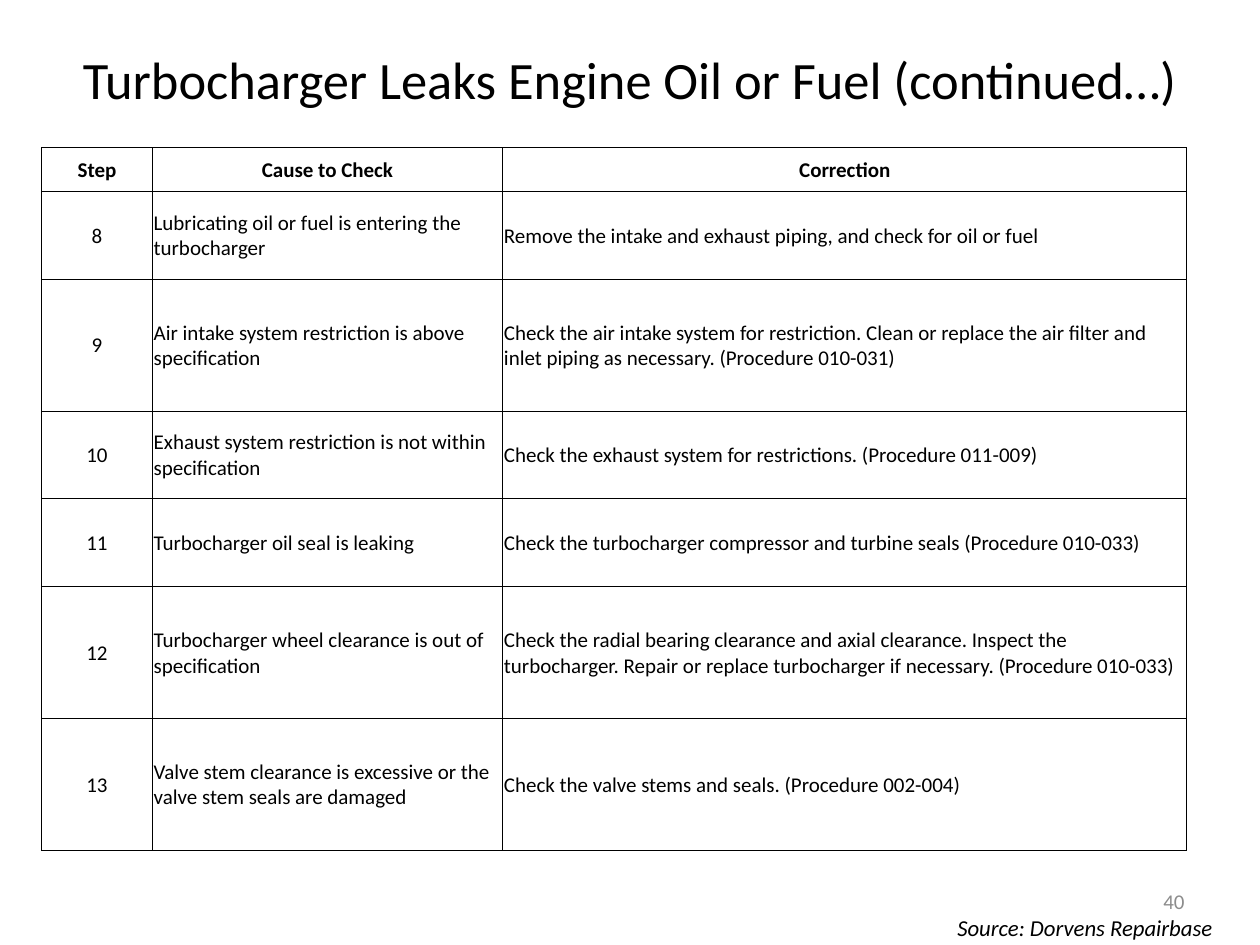
"""Build the turbocharger leak troubleshooting slide."""
from lxml import etree
from pptx import Presentation
from pptx.dml.color import RGBColor
from pptx.enum import text
from pptx.oxml import ns
from pptx.util import Inches, Pt

TITLE = "Turbocharger Leaks Engine Oil or Fuel (continued…)"
SOURCE = "Source: Dorvens Repairbase"
PAGE_NUMBER = "40"
HEADER = ("Step", "Cause to Check", "Correction")
STEPS = [
    ("Lubricating oil or fuel is entering the turbocharger",
     "Remove the intake and exhaust piping, and check for oil or fuel"),
    ("Air intake system restriction is above specification",
     "Check the air intake system for restriction. Clean or replace the air filter "
     "and inlet piping as necessary. (Procedure 010-031)"),
    ("Exhaust system restriction is not within specification",
     "Check the exhaust system for restrictions. (Procedure 011-009)"),
    ("Turbocharger oil seal is leaking",
     "Check the turbocharger compressor and turbine seals (Procedure 010-033)"),
    ("Turbocharger wheel clearance is out of specification",
     "Check the radial bearing clearance and axial clearance. Inspect the turbocharger. "
     "Repair or replace turbocharger if necessary. (Procedure 010-033)"),
    ("Valve stem clearance is excessive or the valve stem seals are damaged",
     "Check the valve stems and seals. (Procedure 002-004)"),
]
FIRST_STEP = 8
COLUMN_WIDTHS = (0.88, 2.78, 5.43)
ROW_UNITS = (1, 2, 3, 2, 2, 3, 3)
TABLE_HEIGHT = 5.58
FONT = "Calibri"
BLACK = RGBColor(0x00, 0x00, 0x00)
GRAY = RGBColor(0x8C, 0x8C, 0x8C)
LEFT, CENTER, RIGHT = text.PP_ALIGN.LEFT, text.PP_ALIGN.CENTER, text.PP_ALIGN.RIGHT
MIDDLE = text.MSO_ANCHOR.MIDDLE


def write(frame, words, size, color=BLACK, align=LEFT, bold=False, italic=False):
    frame.text = words
    para = frame.paragraphs[0]
    para.alignment = align
    font = para.font
    font.name, font.size, font.bold, font.italic = FONT, Pt(size), bold, italic
    font.color.rgb = color


def add_label(page, place, words, size, **style):
    frame = page.shapes.add_textbox(*map(Inches, place)).text_frame
    frame.word_wrap = True
    write(frame, words, size, **style)
    return frame


def outline(cell):
    properties = cell._tc.get_or_add_tcPr()
    for side in ("lnL", "lnR", "lnT", "lnB"):
        line = etree.SubElement(properties, ns.qn(f"a:{side}"), w=str(Pt(0.5)))
        fill = etree.SubElement(line, ns.qn("a:solidFill"))
        etree.SubElement(fill, ns.qn("a:srgbClr"), val=str(BLACK))


def add_steps(page):
    rows = [HEADER] + [(str(number), *step) for number, step in enumerate(STEPS, FIRST_STEP)]
    place = (0.33, 1.17, sum(COLUMN_WIDTHS), TABLE_HEIGHT)
    table = page.shapes.add_table(len(rows), len(HEADER), *map(Inches, place)).table
    table.horz_banding = False
    for column, width in zip(table.columns, COLUMN_WIDTHS):
        column.width = Inches(width)
    for row_index, (row, units) in enumerate(zip(rows, ROW_UNITS)):
        table.rows[row_index].height = Inches(TABLE_HEIGHT * units / sum(ROW_UNITS))
        for column_index, words in enumerate(row):
            cell = table.cell(row_index, column_index)
            is_header = row_index == 0
            centered = is_header or column_index == 0
            write(cell.text_frame, words, 12, align=CENTER if centered else LEFT, bold=is_header)
            cell.vertical_anchor = MIDDLE
            cell.margin_left = cell.margin_right = cell.margin_top = Inches(0.01)
            cell.margin_bottom = 0
            outline(cell)
            cell.fill.background()


def main():
    deck = Presentation()
    deck.slide_width, deck.slide_height = Inches(10), Inches(7.5)
    page = deck.slides.add_slide(deck.slide_layouts[5])
    title = page.shapes.title
    title.left, title.top, title.width, title.height = map(Inches, (0.5, 0, 9, 1.25))
    title.text_frame.vertical_anchor = MIDDLE
    write(title.text_frame, TITLE, 30, align=CENTER)
    add_label(page, (7.5, 7.2, 2.5, 0.32), SOURCE, 13, italic=True)
    add_steps(page)
    number = add_label(page, (7.17, 6.95, 2.33, 0.4), PAGE_NUMBER, 12, color=GRAY, align=RIGHT)
    number.vertical_anchor = MIDDLE
    deck.save("out.pptx")


if __name__ == "__main__":
    main()
